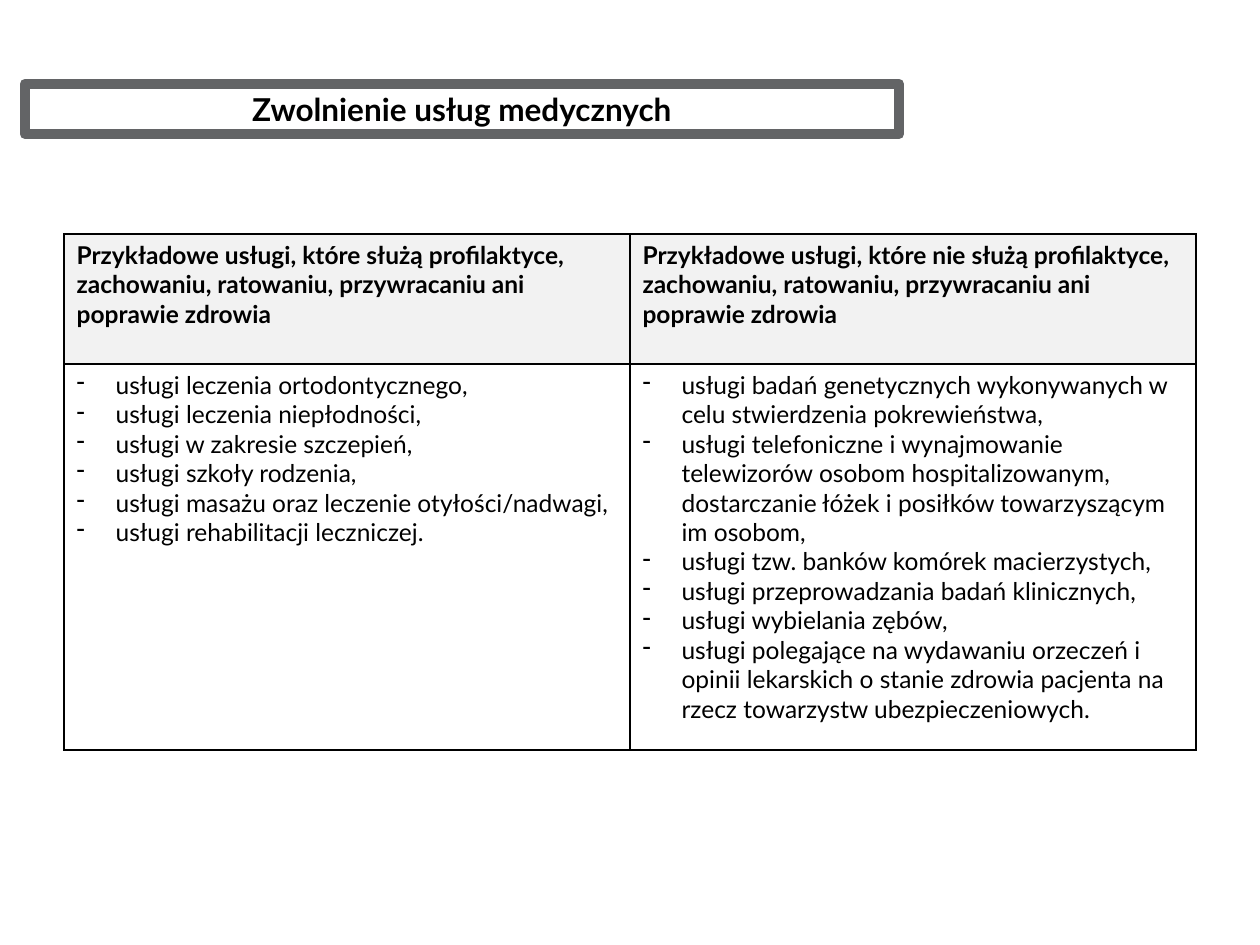
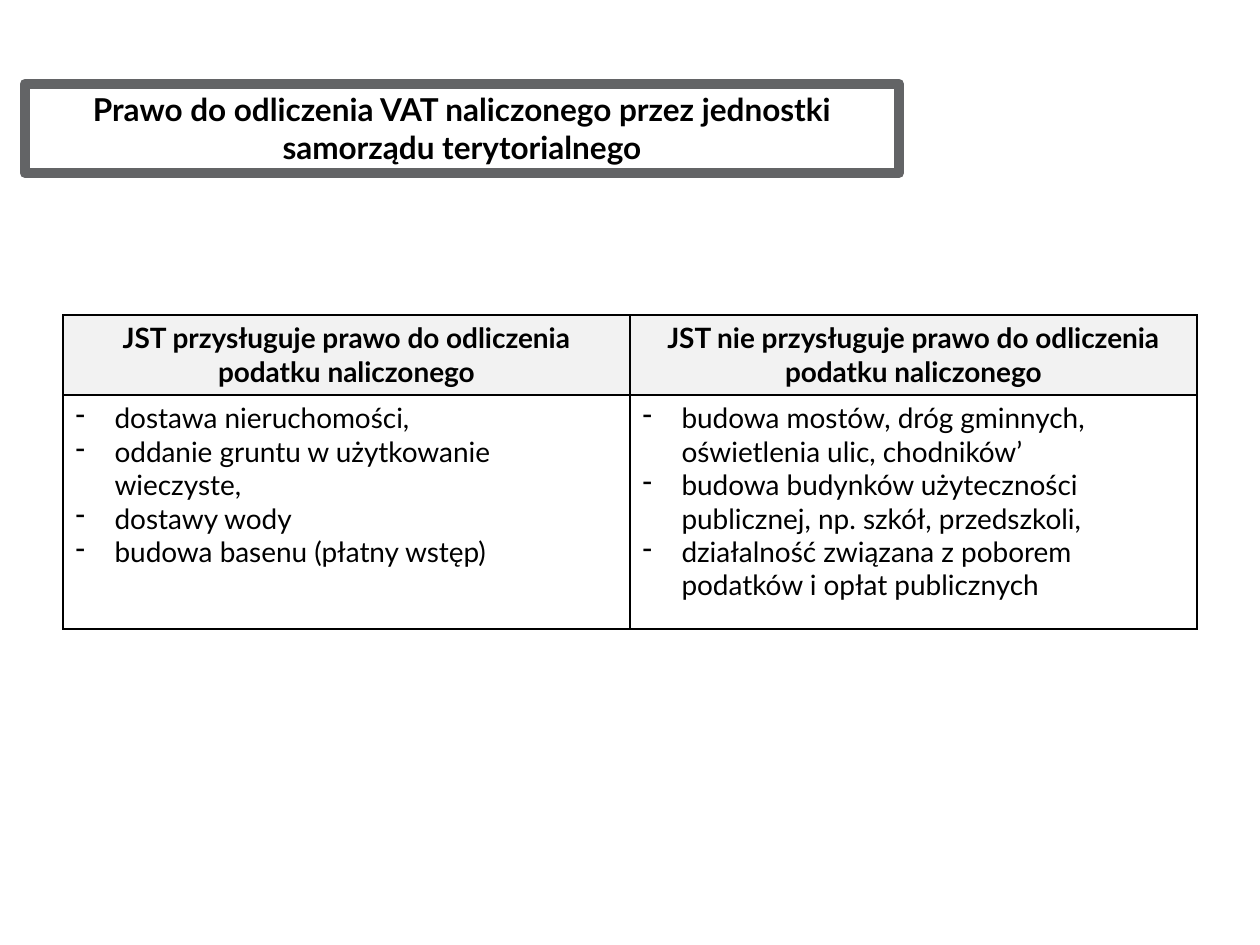
from pptx import Presentation
from pptx import util as u
from pptx.dml.color import RGBColor
from pptx.enum import shapes, text
from pptx.oxml import parse_xml
from pptx.oxml.ns import nsdecls

PX = 914400 // 126
FONT = "Lato"
BLACK, WHITE, GRAY, PALE = "000000", "FFFFFF", "636466", "F2F2F2"
MID, LEFT = text.PP_ALIGN.CENTER, text.PP_ALIGN.LEFT


def color(tone):
    return RGBColor.from_string(tone)


def style(frame, size, bold, align):
    for para in frame.paragraphs:
        para.alignment = align
        for run in para.runs:
            run.font.name = FONT
            run.font.size = u.Pt(size)
            run.font.bold = bold
            run.font.color.rgb = color(BLACK)


pages = [
    dict(
        title="Zwolnienie usług medycznych", tall=50,
        box=(64, 234, 1132), rows=(130, 386), size=14, align=LEFT,
        heads=[
            "Przykładowe usługi, które służą profilaktyce, zachowaniu, ratowaniu, przywracaniu ani poprawie zdrowia",
            "Przykładowe usługi, które nie służą profilaktyce, zachowaniu, ratowaniu, przywracaniu ani poprawie zdrowia",
        ],
        lists=[
            [
                "usługi leczenia ortodontycznego,",
                "usługi leczenia niepłodności,",
                "usługi w zakresie szczepień,",
                "usługi szkoły rodzenia,",
                "usługi masażu oraz leczenie otyłości/nadwagi,",
                "usługi rehabilitacji leczniczej.",
            ],
            [
                "usługi badań genetycznych wykonywanych w celu stwierdzenia pokrewieństwa,",
                "usługi telefoniczne i wynajmowanie telewizorów osobom hospitalizowanym, dostarczanie łóżek i posiłków towarzyszącym im osobom,",
                "usługi tzw. banków komórek macierzystych,",
                "usługi przeprowadzania badań klinicznych,",
                "usługi wybielania zębów,",
                "usługi polegające na wydawaniu orzeczeń i opinii lekarskich o stanie zdrowia pacjenta na rzecz towarzystw ubezpieczeniowych.",
            ],
        ],
    ),
    dict(
        title="Prawo do odliczenia VAT naliczonego przez jednostki samorządu terytorialnego", tall=89,
        box=(63, 315, 1134), rows=(80, 234), size=16, align=MID,
        heads=[
            "JST przysługuje prawo do odliczenia podatku naliczonego",
            "JST nie przysługuje prawo do odliczenia podatku naliczonego",
        ],
        lists=[
            [
                "dostawa nieruchomości,",
                "oddanie gruntu w użytkowanie wieczyste,",
                "dostawy wody",
                "budowa basenu (płatny wstęp)",
            ],
            [
                "budowa mostów, dróg gminnych, oświetlenia ulic, chodników’",
                "budowa budynków użyteczności publicznej, np. szkół, przedszkoli,",
                "działalność związana z poborem podatków i opłat publicznych",
            ],
        ],
    ),
]

deck = Presentation()
deck.slide_width, deck.slide_height = u.Inches(10), u.Inches(7.5)

for page in pages:
    slide = deck.slides.add_slide(deck.slide_layouts[6])

    title = slide.shapes.add_shape(shapes.MSO_SHAPE.RECTANGLE, 25 * PX, 84 * PX, 874 * PX, page["tall"] * PX)
    title.shadow.inherit = False
    title.fill.background()
    title.line.color.rgb = color(GRAY)
    title.line.width = u.Pt(6)
    title.text_frame.word_wrap = True
    title.text_frame.vertical_anchor = text.MSO_ANCHOR.TOP
    title.text_frame.text = page["title"]
    style(title.text_frame, 18, True, MID)

    x, y, wide = page["box"]
    table = slide.shapes.add_table(2, 2, x * PX, y * PX, wide * PX, sum(page["rows"]) * PX).table
    for row, tall in zip(table.rows, page["rows"]):
        row.height = tall * PX

    for col in range(2):
        table.columns[col].width = wide // 2 * PX
        head, body = table.cell(0, col), table.cell(1, col)
        head.text_frame.text = page["heads"][col]
        body.text_frame.text = "\n".join(page["lists"][col])
        for para in body.text_frame.paragraphs:
            props = para._p.get_or_add_pPr()
            props.set("marL", str(39 * PX))
            props.set("indent", str(-39 * PX))
            props.append(parse_xml(f'<a:buChar {nsdecls("a")} char="-"/>'))
        style(head.text_frame, page["size"], True, page["align"])
        style(body.text_frame, page["size"], False, LEFT)

        for cell, tone in ((head, PALE), (body, WHITE)):
            props = cell._tc.get_or_add_tcPr()
            for side in "LRTB":
                props.append(parse_xml(
                    f'<a:ln{side} {nsdecls("a")} w="{u.Pt(1)}"><a:solidFill>'
                    f'<a:srgbClr val="{BLACK}"/></a:solidFill></a:ln{side}>'))
            cell.fill.solid()
            cell.fill.fore_color.rgb = color(tone)

deck.save("out.pptx")
